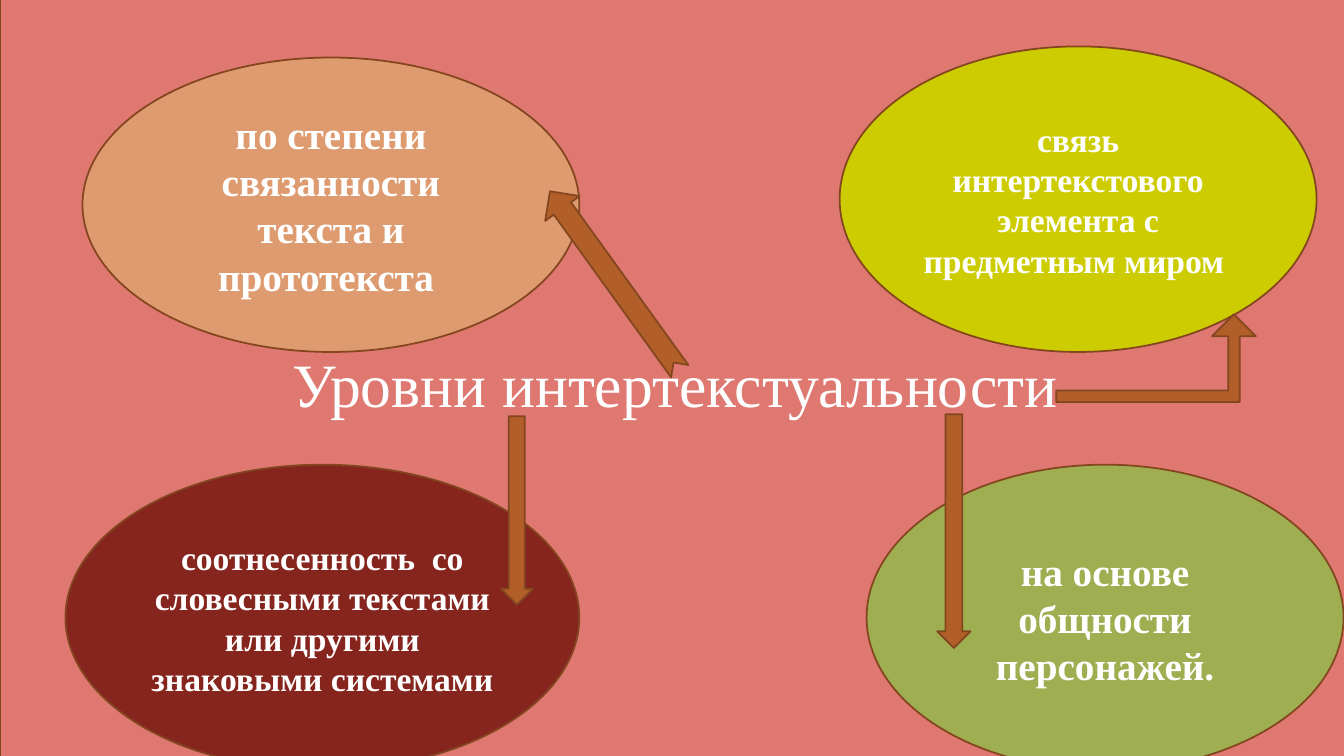
"""Build the slide on the levels of intertextuality."""
from pptx import Presentation
from pptx.dml.color import RGBColor
from pptx.enum.shapes import MSO_SHAPE
from pptx.enum.text import MSO_ANCHOR, PP_ALIGN
from pptx.util import Cm, Pt

RECTANGLE = MSO_SHAPE.RECTANGLE
OVAL = MSO_SHAPE.OVAL
NOTCHED_ARROW = MSO_SHAPE.NOTCHED_RIGHT_ARROW
DOWN_ARROW = MSO_SHAPE.DOWN_ARROW
BENT_ARROW = MSO_SHAPE.BENT_UP_ARROW
MIDDLE = MSO_ANCHOR.MIDDLE
CENTER = PP_ALIGN.CENTER

FONT = "Times New Roman"
COLORS = {
    "backdrop": "DF7870",
    "outline": "83461E",
    "arrow": "B15E28",
    "text": "FFFFFF",
    "peach": "DF9B70",
    "yellow": "CCCC00",
    "green": "9EAE51",
    "maroon": "85251E",
}


def add_figure(page, kind, place, color):
    """Add an outlined preset shape at left, top, width, height in cm."""
    figure = page.shapes.add_shape(kind, *[Cm(length) for length in place])
    figure.shadow.inherit = False
    figure.fill.solid()
    figure.fill.fore_color.rgb = RGBColor.from_string(COLORS[color])
    figure.line.color.rgb = RGBColor.from_string(COLORS["outline"])
    figure.line.width = Pt(1.25)
    return figure


def write(figure, text, size, bold):
    """Put one centred paragraph into a shape."""
    frame = figure.text_frame
    frame.word_wrap = True
    frame.vertical_anchor = MIDDLE
    para = frame.paragraphs[0]
    para.text = text
    para.alignment = CENTER
    para.font.name = FONT
    para.font.size = Pt(size)
    para.font.bold = bold
    para.font.color.rgb = RGBColor.from_string(COLORS["text"])


deck = Presentation()
deck.slide_width = Cm(33.87)
deck.slide_height = Cm(19.05)
page = deck.slides.add_slide(deck.slide_layouts[6])

backdrop = add_figure(page, RECTANGLE, (0, -0.1, 34.42, 19.5), "backdrop")
write(backdrop, "Уровни интертекстуальности ", 44, False)

levels = [
    ((2.08, 1.45, 12.52, 7.42), "peach", 28,
     "по степени связанности текста и прототекста "),
    ((21.16, 1.17, 12.02, 7.7), "yellow", 24,
     "связь интертекстового элемента с предметным миром "),
    ((21.84, 11.71, 12.02, 7.7), "green", 28,
     "на основе общности персонажей."),
    ((1.65, 11.71, 12.95, 7.7), "maroon", 24,
     "соотнесенность  со словесными текстами или другими знаковыми системами "),
]
for place, color, size, text in levels:
    write(add_figure(page, OVAL, place, color), text, size, True)

arrows = [
    (NOTCHED_ARROW, (12.7, 6.55, 5.59, 1.07), 234.2, []),
    (DOWN_ARROW, (12.62, 10.49, 0.81, 4.75), 0, []),
    (DOWN_ARROW, (23.62, 10.44, 0.84, 5.89), 0, []),
    (BENT_ARROW, (26.62, 7.92, 5.03, 2.21), 0, [0.13, 0.25, 0.25]),
]
for kind, place, rotation, adjustments in arrows:
    arrow = add_figure(page, kind, place, "arrow")
    arrow.rotation = rotation
    for index, value in enumerate(adjustments):
        arrow.adjustments[index] = value

deck.save("out.pptx")
